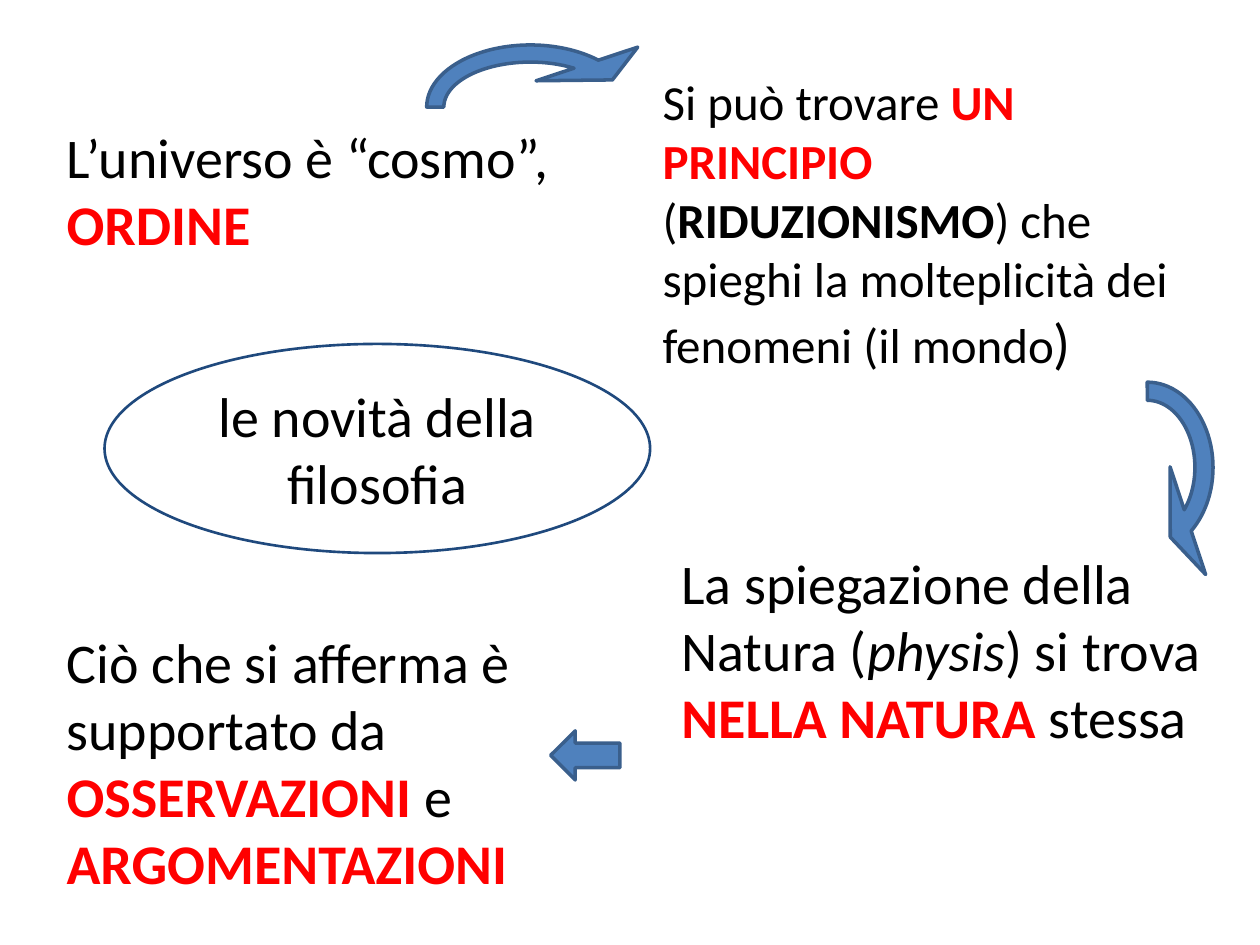
from pptx import Presentation
from pptx.dml.color import RGBColor
from pptx.enum.shapes import MSO_SHAPE
from pptx.enum.text import MSO_ANCHOR, MSO_AUTO_SIZE, PP_ALIGN
from pptx.util import Inches, Pt

OVAL, CURVE, DOWN = MSO_SHAPE.OVAL, MSO_SHAPE.CIRCULAR_ARROW, MSO_SHAPE.DOWN_ARROW
MIDDLE, CENTER = MSO_ANCHOR.MIDDLE, PP_ALIGN.CENTER
GROW = MSO_AUTO_SIZE.SHAPE_TO_FIT_TEXT

FONT = "Calibri"
COLORS = {"text": "000000", "key": "FF0000", "paper": "FFFFFF",
          "ring": "1F497D", "arrow": "4F81BD", "edge": "3A5F8C"}

NOTES = [
    ((0.43, 0.92, 4.33, 1.18), 32,
     [("L’universo è “cosmo”, ", ""), ("ORDINE", "key")]),
    ((5.16, 0.52, 4.49, 2.52), 28,
     [("Si può trovare ", ""), ("UN PRINCIPIO", "key"), (" (", ""),
      ("RIDUZIONISMO", "bold"),
      (") che spieghi la molteplicità dei fenomeni (il mondo", ""), (")", "big")]),
    ((5.31, 4.3, 4.33, 1.72), 32,
     [("La spiegazione della Natura (", ""), ("physis", "italic"),
      (") si trova ", ""), ("NELLA NATURA ", "key"), ("stessa", "")]),
    ((0.43, 4.93, 4.33, 2.26), 32,
     [("Ciò che si afferma è supportato da ", ""), ("OSSERVAZIONI", "key"),
      (" e ", ""), ("ARGOMENTAZIONI", "key")]),
]
THEME = ((0.83, 2.73, 4.33, 1.66), 32, [("le novità della filosofia", "")])
BEND = (0.08, 11.42, 193.61, 108, 0.25)
ARROWS = [
    (CURVE, (3.03, 0, 2.36, 1.7), 0, BEND),
    (CURVE, (8.05, 2.81, 2.11, 1.8), 90, BEND),
    (DOWN, (4.45, 5.72, 0.39, 0.55), 90, ()),
]


def color(name):
    """Return the named colour."""
    return RGBColor.from_string(COLORS[name])


def write(shape, size, parts):
    """Fill a shape with styled runs."""
    frame = shape.text_frame
    frame.word_wrap = True
    frame.auto_size = GROW
    for text, style in parts:
        run = frame.paragraphs[0].add_run()
        run.text = text
        font = run.font
        font.name = FONT
        font.size = Pt(32 if style == "big" else size)
        font.bold = style in ("key", "bold")
        font.italic = style == "italic"
        font.color.rgb = color("key" if style == "key" else "text")


def draw(slide, kind, box, fill, line, width):
    """Add a flat preset shape."""
    shape = slide.shapes.add_shape(kind, *map(Inches, box))
    shape.shadow.inherit = False
    shape.fill.solid()
    shape.fill.fore_color.rgb = color(fill)
    shape.line.color.rgb = color(line)
    shape.line.width = Pt(width)
    return shape


def main():
    """Build the slide on what is new in philosophy."""
    deck = Presentation()
    deck.slide_width, deck.slide_height = Inches(10), Inches(7.5)
    slide = deck.slides.add_slide(deck.slide_layouts[6])
    for box, size, parts in NOTES:
        write(slide.shapes.add_textbox(*map(Inches, box)), size, parts)
    box, size, parts = THEME
    oval = draw(slide, OVAL, box, "paper", "ring", 1.5)
    write(oval, size, parts)
    oval.text_frame.vertical_anchor = MIDDLE
    oval.text_frame.paragraphs[0].alignment = CENTER
    for kind, box, turn, bend in ARROWS:
        arrow = draw(slide, kind, box, "arrow", "edge", 2)
        arrow.rotation = turn
        for i, value in enumerate(bend):
            arrow.adjustments[i] = value
    deck.save("out.pptx")


if __name__ == "__main__":
    main()
